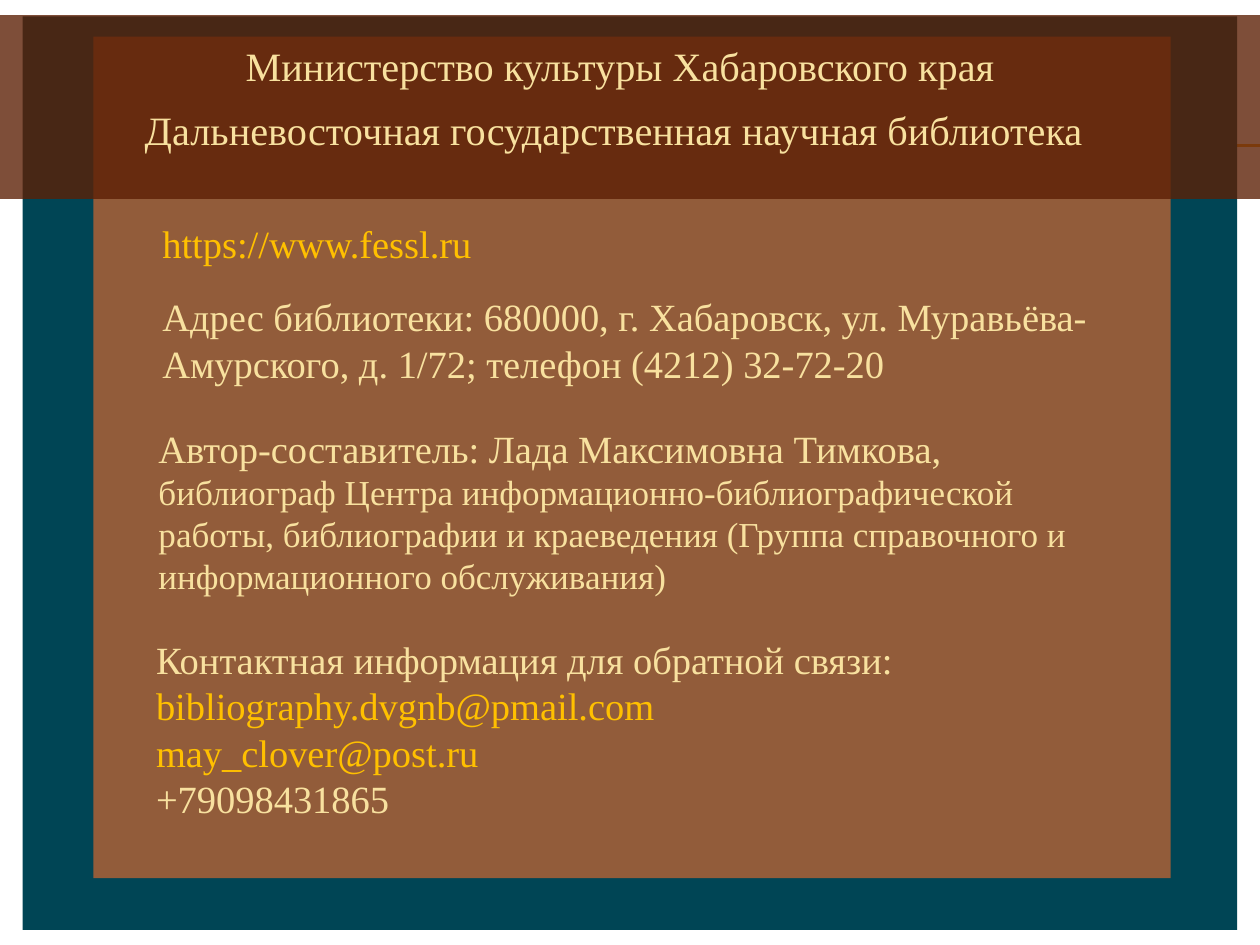
from lxml import etree
from pptx import Presentation
from pptx.dml.color import RGBColor
from pptx.enum import shapes, text
from pptx.oxml import ns
from pptx.util import Inches, Pt

FONT = "Times New Roman"
CREAM, GOLD = "F8E19F", "FFC000"

# Content: each paragraph is a colour and a list of (text, size) runs
HEADING = ("Министерство культуры Хабаровского края", (1.85, 0.28, 7.64, 0.49))
BLOCKS = [
    ((1.05, 0.79, 7.81, 0.49),
     [(CREAM, [("Дальневосточная государственная научная библиотека", 23)])]),
    ((1.19, 1.7, 7.64, 0.84), [(GOLD, [("https://www.fessl.ru", 22)])]),
    ((1.19, 2.28, 7.64, 0.84),
     [(CREAM, [("Адрес библиотеки: 680000, г. Хабаровск, ул. Муравьёва-Амурского, "
                "д. 1/72; телефон (4212) 32-72-20", 22)])]),
    ((1.16, 3.32, 7.64, 1.85),
     [(CREAM, [("Автор-составитель: Лада Максимовна Тимкова, ", 22),
               ("библиограф Центра информационно-библиографической работы, "
                "библиографии и краеведения (Группа справочного и "
                "информационного обслуживания)", 20)])]),
    ((1.14, 5, 7.64, 1.58),
     [(CREAM, [("Контактная информация для обратной связи:", 22)]),
      (GOLD, [("bibliography.dvgnb@pmail.com", 22)]),
      (GOLD, [("may_clover@post.ru", 22)]),
      (CREAM, [("+79098431865", 22)])]),
]
# Panels: place, fill, opacity in percent
PANELS = [
    ((0.18, 0.13, 9.64, 7.25), "004555", 100),
    ((0.74, 0.29, 8.55, 6.68), "925C3A", 100),
    ((0, 0.12, 10, 1.46), "5C1F04", 79),
]
RULES = [1.15, 1.16]


def color(value):
    return RGBColor.from_string(value)


def add_element(parent, tag, **attributes):
    return etree.SubElement(parent, ns.qn(tag), attributes)


def add_text_shadow(span):
    effects = add_element(span.font._element, "a:effectLst")
    shadow = add_element(effects, "a:outerShdw", blurRad="38100", dist="38100",
                         dir="2700000", algn="tl")
    black = add_element(shadow, "a:srgbClr", val="000000")
    add_element(black, "a:alpha", val="43000")


def write(box, paragraphs):
    frame = box.text_frame
    frame.word_wrap = True
    frame.auto_size = text.MSO_AUTO_SIZE.NONE
    frame.vertical_anchor = text.MSO_ANCHOR.TOP
    for index, (tone, runs) in enumerate(paragraphs):
        para = frame.add_paragraph() if index else frame.paragraphs[0]
        para.alignment = text.PP_ALIGN.LEFT
        para.font.name = FONT
        para.font.color.rgb = color(tone)
        para.font.size = Pt(runs[0][1])
        for words, size in runs:
            span = para.add_run()
            span.text = words
            if size != runs[0][1]:
                span.font.size = Pt(size)
            add_text_shadow(span)


deck = Presentation()
deck.slide_width, deck.slide_height = Inches(10), Inches(7.5)
page = deck.slides.add_slide(deck.slide_layouts[5])

# Thin rules behind the panels
for y in RULES:
    rule = page.shapes.add_connector(shapes.MSO_CONNECTOR.STRAIGHT, Inches(0.56),
                                     Inches(y), Inches(10), Inches(y))
    rule.line.color.rgb = color("F0A22E")
    rule.line.width = Pt(0.75)
    add_element(rule._element.spPr, "a:effectLst")

# Background panels and heading band
for place, fill, opacity in PANELS:
    panel = page.shapes.add_shape(shapes.MSO_SHAPE.RECTANGLE, *map(Inches, place))
    panel.shadow.inherit = False
    panel.fill.solid()
    panel.fill.fore_color.rgb = color(fill)
    panel.line.fill.background()
    if opacity < 100:
        tint = panel._element.spPr.find(".//" + ns.qn("a:srgbClr"))
        add_element(tint, "a:alpha", val=str(opacity * 1000))

# Title, raised above the panels
words, place = HEADING
title = page.shapes.title
title.left, title.top, title.width, title.height = map(Inches, place)
write(title, [(CREAM, [(words, 23)])])
title.element.getparent().append(title.element)

# Library, author and contact details
for place, paragraphs in BLOCKS:
    write(page.shapes.add_textbox(*map(Inches, place)), paragraphs)

deck.save("out.pptx")
